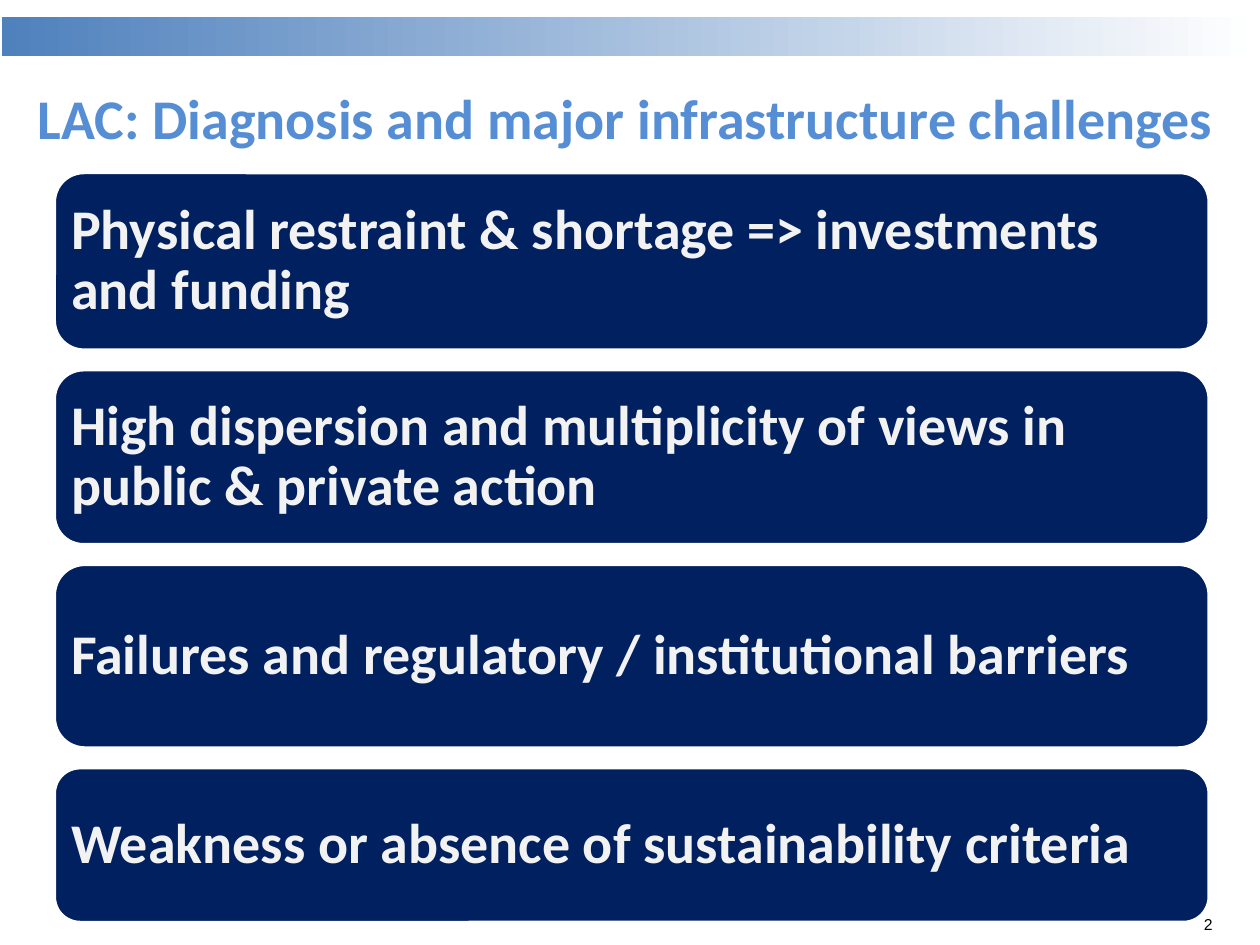
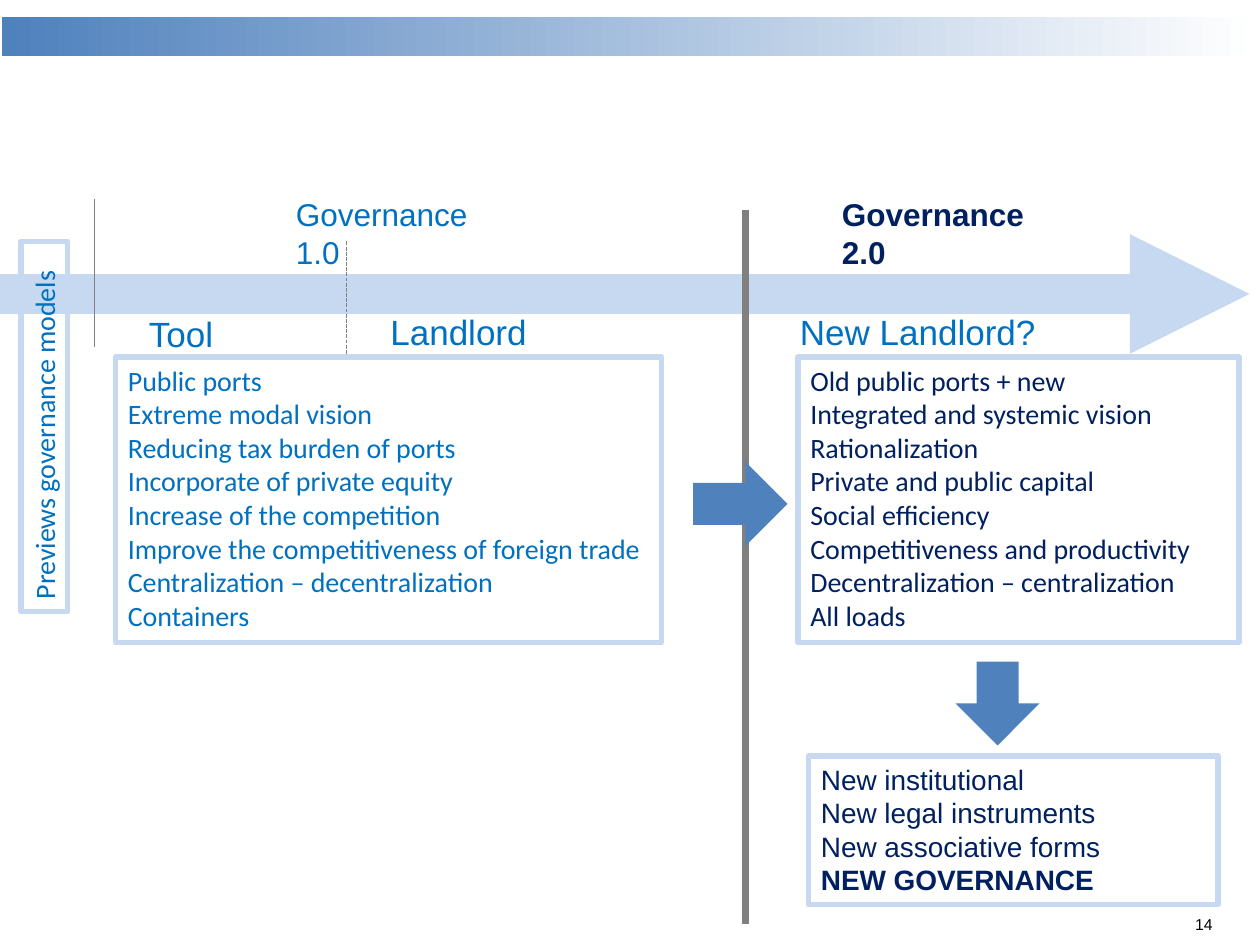
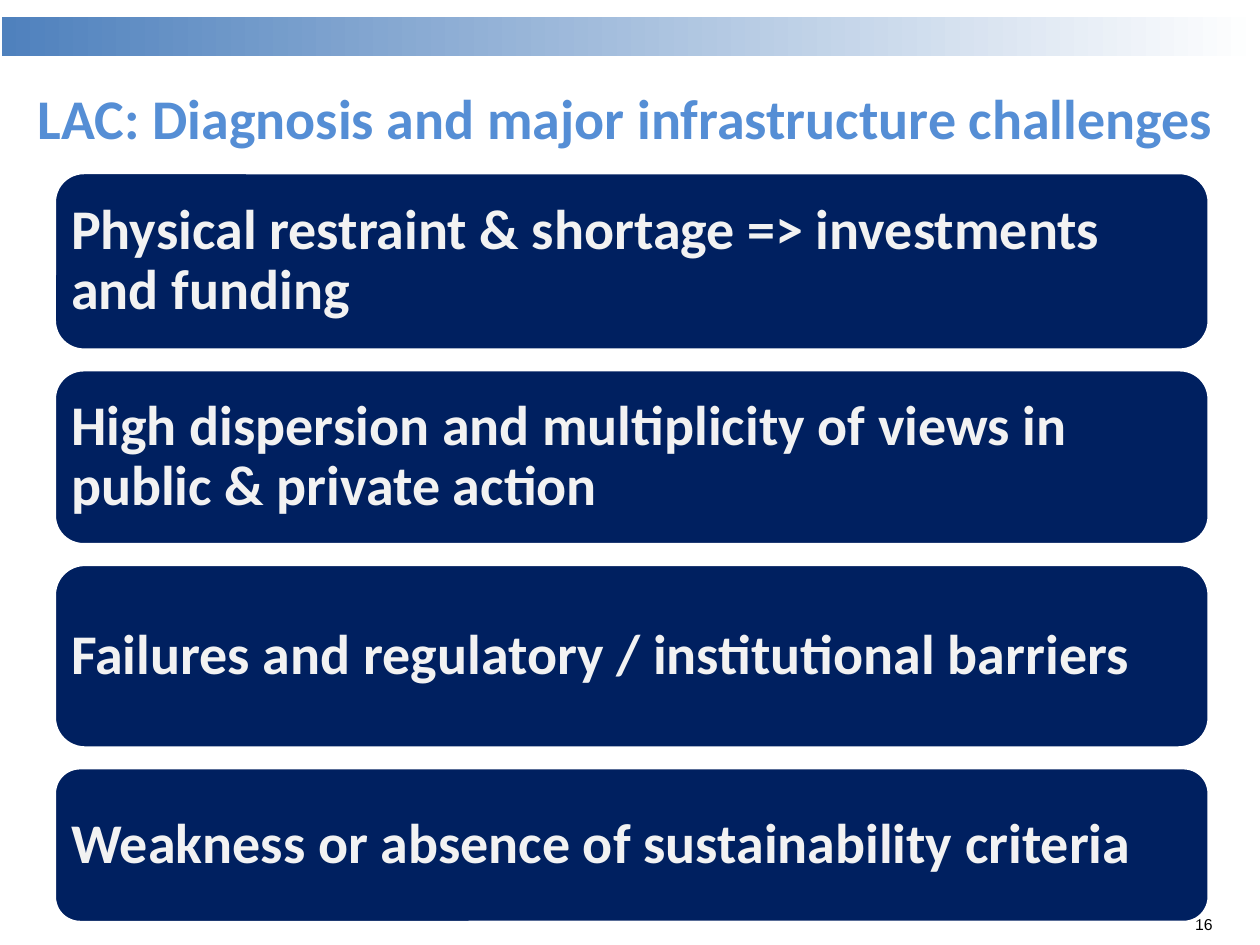
from lxml import etree
from pptx import Presentation
from pptx.dml.color import RGBColor
from pptx.enum.dml import MSO_LINE
from pptx.enum.shapes import MSO_CONNECTOR, MSO_SHAPE
from pptx.enum.text import MSO_ANCHOR, MSO_AUTO_SIZE, PP_ALIGN
from pptx.oxml.ns import qn
from pptx.util import Pt

RECTANGLE = MSO_SHAPE.RECTANGLE
ROUNDED = MSO_SHAPE.ROUNDED_RECTANGLE
RIGHT_ARROW = MSO_SHAPE.RIGHT_ARROW
STRAIGHT = MSO_CONNECTOR.STRAIGHT
DASH = MSO_LINE.SQUARE_DOT
MIDDLE = MSO_ANCHOR.MIDDLE
LEFT, RIGHT = PP_ALIGN.LEFT, PP_ALIGN.RIGHT
NO_AUTOFIT = MSO_AUTO_SIZE.NONE
TITLE_ONLY, BLANK = 5, 6

BLUE, WHITE, BLACK = "4F81BD", "FFFFFF", "000000"
TITLE_BLUE, NAVY, BRIGHT = "558ED5", "002060", "0070C0"
PALE, GRAY, OFF_WHITE = "C6D9F1", "808080", "F2F2F2"

BAND_BOX = (1, 10, 719, 22)
NUMBER_BOX = (682, 522.5, 11, 11)
TITLE_BOX = (14.4, 43.2, 692, 47.5)
CHALLENGES_BOX = (31, 98.6, 660, 428.6)
TIMELINE_BOX = (0, 108, 720, 420)

CHALLENGES = [
    ("Physical restraint & shortage => investments and funding", 101.5),
    ("High dispersion and multiplicity of views in public & private action", 100),
    ("Failures and regulatory / institutional barriers", 105),
    ("Weakness or absence of sustainability criteria", 88.5),
]
OLD_MODEL = [
    "Public ports",
    "Extreme modal vision",
    "Reducing tax burden of ports",
    "Incorporate of private equity",
    "Increase of the competition",
    "Improve the competitiveness of foreign trade",
    "Centralization – decentralization",
    "Containers",
]
NEW_MODEL = [
    "Old public ports + new",
    "Integrated and systemic vision Rationalization",
    "Private and public capital",
    "Social efficiency",
    "Competitiveness and productivity",
    "Decentralization – centralization",
    "All loads",
]
OUTCOMES = ["New institutional", "New legal instruments", "New associative forms"]


def color(hex_string):
    return RGBColor.from_string(hex_string)


def points(box):
    return [Pt(length) for length in box]


def add_run(paragraph, text, size, font, hex_string, bold=False):
    run = paragraph.add_run()
    run.text = text
    run.font.size = Pt(size)
    run.font.name = font
    run.font.bold = bold
    run.font.color.rgb = color(hex_string)


def set_margins(frame, margin):
    frame.margin_left = frame.margin_right = Pt(margin)
    frame.margin_top = frame.margin_bottom = Pt(margin)


def add_shape(slide, kind, box, fill=None):
    shape = slide.shapes.add_shape(kind, *points(box))
    shape.shadow.inherit = False
    shape.line.fill.background()
    if fill:
        shape.fill.solid()
        shape.fill.fore_color.rgb = color(fill)
    return shape


def add_text(slide, box, lines, size, font, hex_string, bold=False, border=None):
    """Add a text box with one paragraph per line and an optional border."""
    shape = slide.shapes.add_textbox(*points(box))
    frame = shape.text_frame
    frame.word_wrap = True
    for index, line in enumerate(lines):
        paragraph = frame.add_paragraph() if index else frame.paragraphs[0]
        add_run(paragraph, line, size, font, hex_string, bold)
    if border:
        shape.line.color.rgb = color(border)
        shape.line.width = Pt(3)
    return shape


def add_line(slide, start, end, hex_string, width, dash=None, arrow=False):
    connector = slide.shapes.add_connector(STRAIGHT, *points(start + end))
    connector.line.color.rgb = color(hex_string)
    connector.line.width = Pt(width)
    if dash:
        connector.line.dash_style = dash
    if arrow:
        etree.SubElement(connector.line._get_or_add_ln(), qn("a:tailEnd"), type="triangle")
    etree.SubElement(connector._element.spPr, qn("a:effectLst"))


def add_slide(presentation, layout, number):
    """Add a slide with the shared gradient band and page number."""
    slide = presentation.slides.add_slide(presentation.slide_layouts[layout])
    band = add_shape(slide, RECTANGLE, BAND_BOX)
    band.fill.gradient()
    band.fill.gradient_angle = 0
    for stop, hex_string in zip(band.fill.gradient_stops, (BLUE, WHITE)):
        stop.color.rgb = color(hex_string)
    page = add_text(slide, NUMBER_BOX, [str(number)], 9, "Arial", BLACK)
    page.text_frame.word_wrap = False
    page.text_frame.paragraphs[0].alignment = RIGHT
    set_margins(page.text_frame, 0)
    return slide


def set_title(slide, text):
    title = slide.shapes.title
    title.left, title.top, title.width, title.height = points(TITLE_BOX)
    frame = title.text_frame
    frame.auto_size = NO_AUTOFIT
    frame.vertical_anchor = MIDDLE
    frame.paragraphs[0].alignment = LEFT
    add_run(frame.paragraphs[0], text, 32, "Calibri", TITLE_BLUE, True)


def add_challenges(slide, box):
    """Stack the challenge bars with equal gaps inside the box."""
    left, top, width, height = box
    gap = (height - sum(bar[1] for bar in CHALLENGES)) / (len(CHALLENGES) - 1)
    for text, bar_height in CHALLENGES:
        bar = add_shape(slide, ROUNDED, (left, top, width, bar_height), NAVY)
        bar.line.color.rgb = color(WHITE)
        bar.line.width = Pt(2)
        frame = bar.text_frame
        frame.word_wrap = True
        frame.vertical_anchor = MIDDLE
        corner_inset = 0.29 * bar_height / 6
        set_margins(frame, 9.6 - corner_inset)
        paragraph = frame.paragraphs[0]
        paragraph.alignment = LEFT
        paragraph.line_spacing = 0.9
        add_run(paragraph, text, 32, "Calibri", OFF_WHITE, True)
        top += bar_height + gap


def add_timeline(slide, box):
    """Draw the time arrow, its dividers and the headings along it."""
    left, top, width, height = box
    axis = top + 60
    add_line(slide, (left, axis), (left + width - 6, axis), PALE, 22.75, arrow=True)
    for x, start, end, line_width, dash in [
        (54, 6, 90, 0.75, None),
        (198, 30, 96, 0.75, DASH),
        (426, 12, height, 4.25, None),
    ]:
        add_line(slide, (left + x, top + start), (left + x, top + end), GRAY, line_width, dash)
    for x, text, hex_string, bold in [
        (162, "Governance 1.0", BRIGHT, False),
        (474, "Governance 2.0", NAVY, True),
    ]:
        add_text(slide, (left + x, top, 131, 29), [text], 18, "Arial", hex_string, bold)
    for x, y, text_width, text in [
        (78, 67, 72, "Tool"),
        (216, 66, 103, "Landlord"),
        (450, 66, 152, "New Landlord?"),
    ]:
        add_text(slide, (left + x, top + y, text_width, 32), [text], 20, "Arial", BRIGHT)


def add_models(slide, box):
    """Place the old and new model lists, the outcome and the linking arrows."""
    left, top = box[:2]
    for x, model_width, lines, hex_string in [
        (66, 312, OLD_MODEL, BRIGHT),
        (456, 252, NEW_MODEL, NAVY),
    ]:
        model_box = (left + x, top + 96, model_width, 163)
        add_text(slide, model_box, lines, 16, "Calibri", hex_string, border=PALE)
    add_shape(slide, RIGHT_ARROW, (left + 396, top + 156, 54, 48), BLUE)
    outcome_box = (left + 462, top + 324, 234, 85)
    outcome = add_text(slide, outcome_box, OUTCOMES, 16, "Arial", NAVY, border=PALE)
    closing = outcome.text_frame.paragraphs[-1]
    closing.add_line_break()
    add_run(closing, "NEW GOVERNANCE", 16, "Arial", NAVY, True)
    down_arrow = add_shape(slide, RIGHT_ARROW, (left + 546, top + 270, 48, 48), BLUE)
    down_arrow.rotation = 90
    label_box = (left - 80.6, top + 122.4, 211.7, 26.6)
    label = add_text(slide, label_box, ["Previews governance models"], 16, "Calibri", BRIGHT, border=PALE)
    label.rotation = 270


def add_challenges_slide(presentation, number):
    slide = add_slide(presentation, TITLE_ONLY, number)
    set_title(slide, "LAC: Diagnosis and major infrastructure challenges")
    add_challenges(slide, CHALLENGES_BOX)


def add_governance_slide(presentation, number):
    slide = add_slide(presentation, BLANK, number)
    add_timeline(slide, TIMELINE_BOX)
    add_models(slide, TIMELINE_BOX)


def main():
    presentation = Presentation()
    presentation.slide_width, presentation.slide_height = Pt(720), Pt(540)
    add_challenges_slide(presentation, 2)
    add_governance_slide(presentation, 14)
    add_challenges_slide(presentation, 16)
    presentation.save("out.pptx")


if __name__ == "__main__":
    main()
